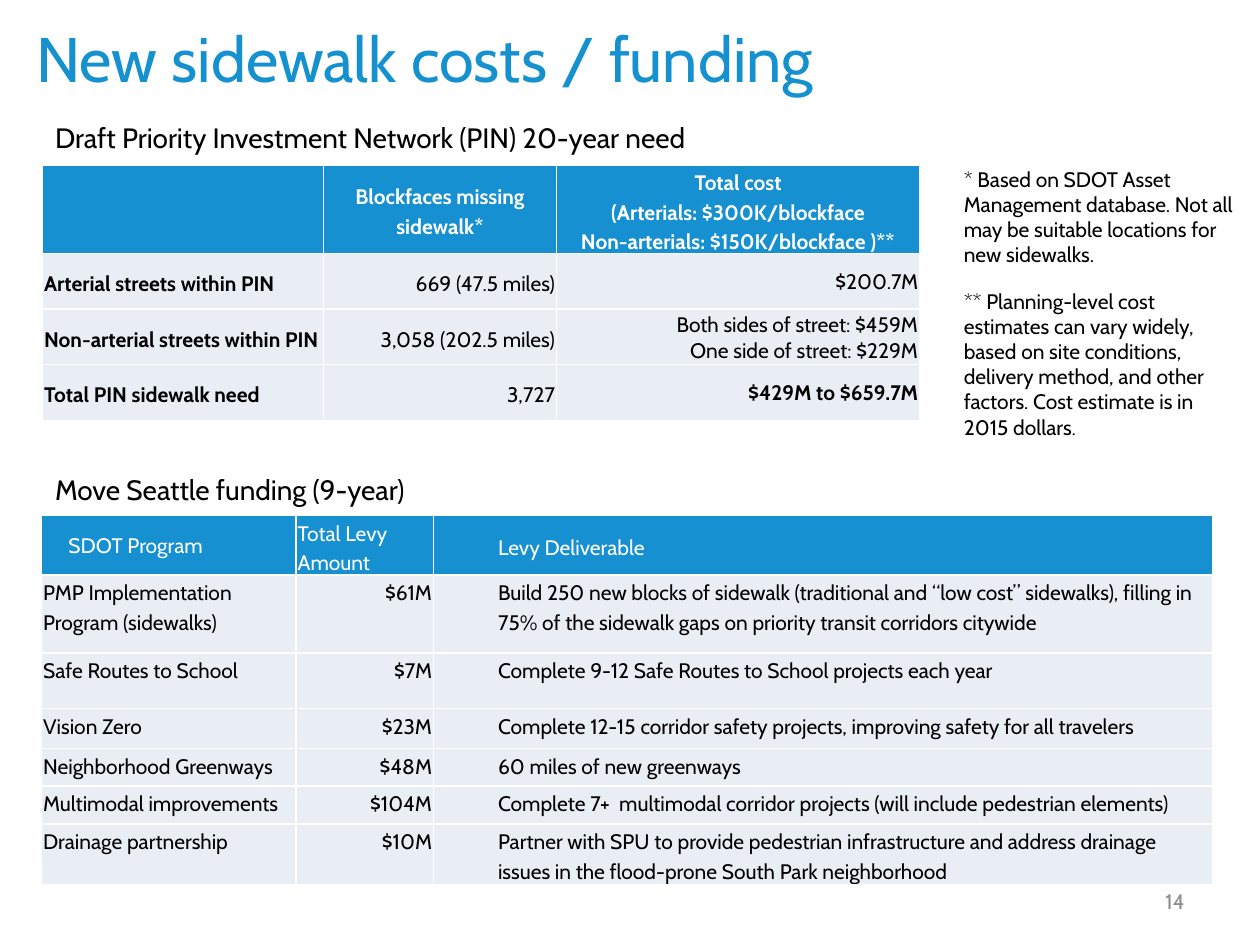
from dataclasses import dataclass

from lxml.etree import SubElement
from pptx import Presentation
from pptx.dml.color import RGBColor
from pptx.enum.text import MSO_ANCHOR as Anchor, PP_ALIGN as Align
from pptx.oxml.ns import qn
from pptx.util import Cm, Pt


@dataclass(frozen=True)
class Theme:
    font: str = "Cabin"
    title_blue: str = "1691D0"
    header_blue: str = "1690D0"
    row_tint: str = "E9EDF4"
    black: str = "000000"
    white: str = "FFFFFF"
    grey: str = "8C8C8C"
    title_size: float = 36
    heading_size: float = 16
    body_size: float = 12
    period_size: float = 11


@dataclass(frozen=True)
class Box:
    left: float
    top: float
    width: float
    height: float


@dataclass(frozen=True)
class CellStyle:
    align: Align = Align.LEFT
    anchor: Anchor = Anchor.TOP
    bold: bool = False
    spacing: float | None = 1.15
    indent: float = 0


@dataclass(frozen=True)
class Grid:
    left: float
    top: float
    columns: list[float]
    heights: list[float]
    rows: list[list[str]]


THEME = Theme()

NEED = Grid(
    0.86, 3.33, [5.66, 4.7, 7.32], [1.78, 1.12, 1.12, 1.12],
    [
        ["", "Blockfaces missing sidewalk*",
         "Total cost\n(Arterials: $300K/blockface\nNon-arterials: $150K/blockface )**"],
        ["Arterial streets within PIN", "669 (47.5 miles)", "$200.7M"],
        ["Non-arterial streets within PIN", "3,058 (202.5 miles)",
         "Both sides of street: $459M\nOne side of street: $229M"],
        ["Total PIN sidewalk need", "3,727", "$429M to $659.7M"],
    ],
)

FUNDING = Grid(
    0.84, 10.39, [5.13, 2.77, 15.7], [1.19, 1.57, 1.12, 0.81, 0.76, 0.76, 1.22],
    [
        ["SDOT Program", "Total Levy Amount", "Levy Deliverable"],
        ["PMP Implementation Program (sidewalks)", "$61M",
         "Build 250 new blocks of sidewalk (traditional and “low cost” sidewalks), "
         "filling in 75% of the sidewalk gaps on priority transit corridors citywide"],
        ["Safe Routes to School", "$7M",
         "Complete 9-12 Safe Routes to School projects each year"],
        ["Vision Zero", "$23M",
         "Complete 12-15 corridor safety projects, improving safety for all travelers"],
        ["Neighborhood Greenways", "$48M", "60 miles of new greenways"],
        ["Multimodal improvements", "$104M",
         "Complete 7+  multimodal corridor projects (will include pedestrian elements)"],
        ["Drainage partnership", "$10M",
         "Partner with SPU to provide pedestrian infrastructure and address drainage "
         "issues in the flood-prone South Park neighborhood"],
    ],
)

NOTES = (
    "* Based on SDOT Asset Management database. Not all may be suitable locations "
    "for new sidewalks.\n"
    "** Planning-level cost estimates can vary widely, based on site conditions, "
    "delivery method, and other factors. Cost estimate is in 2015 dollars"
)


def add_run(paragraph, text: str, size: float, color: str, bold: bool = False) -> None:
    run = paragraph.add_run()
    run.text = text
    run.font.name = THEME.font
    run.font.size = Pt(size)
    run.font.bold = bold
    run.font.color.rgb = RGBColor.from_string(color)


def write(frame, text: str, *, size: float = THEME.body_size, color: str = THEME.black,
          bold: bool = False, align: Align = Align.LEFT, spacing: float | None = None,
          before: float = 0, after: float = 0, indent: float = 0):
    """Fill a text frame, one paragraph a line, and return the last paragraph."""
    for index, line in enumerate(text.split("\n")):
        paragraph = frame.add_paragraph() if index else frame.paragraphs[0]
        paragraph.alignment = align
        paragraph.line_spacing = spacing
        paragraph.space_before, paragraph.space_after = Pt(before), Pt(after)
        if indent:
            properties = paragraph._p.get_or_add_pPr()
            properties.set("marL", str(Cm(indent)))
            properties.set("indent", "0")
        add_run(paragraph, line, size, color, bold)
    return paragraph


def add_text(slide, box: Box, text: str, anchor: Anchor = Anchor.TOP, **text_format):
    frame = slide.shapes.add_textbox(
        Cm(box.left), Cm(box.top), Cm(box.width), Cm(box.height)).text_frame
    frame.word_wrap = True
    frame.vertical_anchor = anchor
    return write(frame, text, **text_format)


def add_borders(cell) -> None:
    properties = cell._tc.get_or_add_tcPr()
    for side in ("lnL", "lnR", "lnT", "lnB"):
        line = SubElement(properties, qn(f"a:{side}"), w=str(Pt(1)))
        fill = SubElement(line, qn("a:solidFill"))
        SubElement(fill, qn("a:srgbClr"), val=THEME.white)


def need_style(row: int, column: int) -> CellStyle:
    if row == 0:
        return CellStyle(Align.CENTER, Anchor.MIDDLE, bold=True)
    return CellStyle(
        align=Align.RIGHT if column else Align.LEFT,
        anchor=Anchor.MIDDLE,
        bold=column == 0 or (row, column) == (3, 2),
        spacing=None if column == 2 else 1.15,
    )


def funding_style(row: int, column: int) -> CellStyle:
    if row == 0:
        return CellStyle(anchor=Anchor.MIDDLE, spacing=1.15 if column else None,
                         indent=(0.51, 0, 1.27)[column])
    return CellStyle(align=Align.RIGHT if column == 1 else Align.LEFT,
                     indent=1.27 if column == 2 else 0)


def add_grid(slide, grid: Grid, style_of) -> None:
    table = slide.shapes.add_table(
        len(grid.heights), len(grid.columns), Cm(grid.left), Cm(grid.top),
        Cm(sum(grid.columns)), Cm(sum(grid.heights))).table
    for column, width in zip(table.columns, grid.columns):
        column.width = Cm(width)
    for row, height in zip(table.rows, grid.heights):
        row.height = Cm(height)
    for r, texts in enumerate(grid.rows):
        for c, text in enumerate(texts):
            cell, style = table.cell(r, c), style_of(r, c)
            add_borders(cell)
            cell.fill.solid()
            cell.fill.fore_color.rgb = RGBColor.from_string(
                THEME.row_tint if r else THEME.header_blue)
            cell.margin_left = cell.margin_right = cell.margin_top = Cm(0.03)
            cell.margin_bottom = 0
            cell.vertical_anchor = style.anchor
            if text:
                write(cell.text_frame, text, color=THEME.black if r else THEME.white,
                      bold=style.bold, align=style.align, spacing=style.spacing,
                      indent=style.indent)


def main() -> None:
    deck = Presentation()
    deck.slide_width, deck.slide_height = Cm(25.4), Cm(19.05)
    slide = deck.slides.add_slide(deck.slide_layouts[6])

    add_text(slide, Box(0.48, 0.53, 22.86, 1.27), "New sidewalk costs / funding",
             Anchor.MIDDLE, size=THEME.title_size, color=THEME.title_blue)
    headings = [
        (Box(0.86, 2.31, 17.65, 1.27), "Draft Priority Investment Network (PIN) 20-year need"),
        (Box(0.86, 9.4, 10.52, 1.27), "Move Seattle funding (9-year)"),
    ]
    for box, heading in headings:
        add_text(slide, box, heading, size=THEME.heading_size, before=6, after=6)
    last_note = add_text(slide, Box(19.18, 3.23, 6.1, 7.21), NOTES, before=12)
    add_run(last_note, ".", THEME.period_size, THEME.black)

    add_grid(slide, NEED, need_style)
    add_grid(slide, FUNDING, funding_style)
    add_text(slide, Box(18.21, 17.65, 5.92, 1.02), "14", Anchor.MIDDLE,
             color=THEME.grey, align=Align.RIGHT)
    deck.save("out.pptx")


if __name__ == "__main__":
    main()
